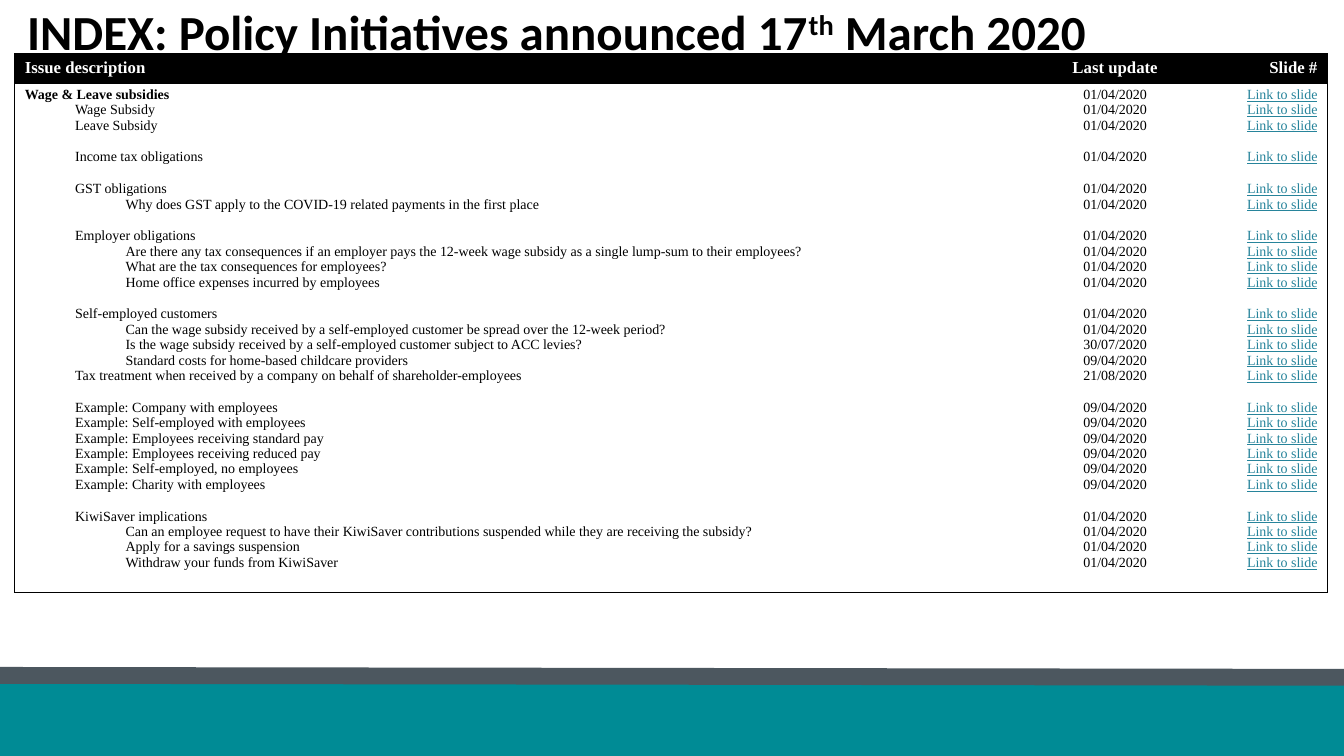
from dataclasses import dataclass

from lxml import etree
from pptx import Presentation
from pptx.dml.color import RGBColor
from pptx.enum.shapes import MSO_CONNECTOR, MSO_SHAPE
from pptx.enum.text import MSO_ANCHOR, MSO_AUTO_SIZE, PP_ALIGN
from pptx.oxml.ns import qn
from pptx.util import Pt

LEFT, CENTER, RIGHT = PP_ALIGN.LEFT, PP_ALIGN.CENTER, PP_ALIGN.RIGHT
MIDDLE, NO_AUTOFIT = MSO_ANCHOR.MIDDLE, MSO_AUTO_SIZE.NONE
RECTANGLE, STRAIGHT = MSO_SHAPE.RECTANGLE, MSO_CONNECTOR.STRAIGHT
TITLE_ONLY = 5


@dataclass(frozen=True)
class Theme:
    title_font: str = "Calibri"
    table_font: str = "Times New Roman"
    title_size: float = 35
    header_size: float = 12
    entry_size: float = 10
    line_pitch: float = 11
    group_gap: float = 11.7
    indent: float = 36
    border_width: float = 0.75
    black: str = "000000"
    white: str = "FFFFFF"
    link: str = "27849B"
    teal: str = "008B95"
    slate: str = "4C575F"


APRIL_1, APRIL_9 = "01/04/2020", "09/04/2020"
JULY_30, AUGUST_21 = "30/07/2020", "21/08/2020"
LINK_TEXT = "Link to slide"
HEADINGS = ["Issue description", "Last update", "Slide #"]
ALIGNMENTS = [LEFT, CENTER, RIGHT]
COLUMN_WIDTHS = [725.2, 121.7, 90.9]
ROW_HEIGHTS = [21.2, 363.8]

# Each group holds (indent level, issue, last update).
ISSUE_GROUPS = [
    [(0, "Wage & Leave subsidies", APRIL_1),
     (1, "Wage Subsidy", APRIL_1),
     (1, "Leave Subsidy", APRIL_1)],
    [(1, "Income tax obligations", APRIL_1)],
    [(1, "GST obligations", APRIL_1),
     (2, "Why does GST apply to the COVID-19 related payments in the first place", APRIL_1)],
    [(1, "Employer obligations", APRIL_1),
     (2, "Are there any tax consequences if an employer pays the 12-week wage subsidy "
         "as a single lump-sum to their employees?", APRIL_1),
     (2, "What are the tax consequences for employees?", APRIL_1),
     (2, "Home office expenses incurred by employees", APRIL_1)],
    [(1, "Self-employed customers", APRIL_1),
     (2, "Can the wage subsidy received by a self-employed customer be spread over "
         "the 12-week period?", APRIL_1),
     (2, "Is the wage subsidy received by a self-employed customer subject to ACC levies?", JULY_30),
     (2, "Standard costs for home-based childcare providers", APRIL_9),
     (1, "Tax treatment when received by a company on behalf of shareholder-employees", AUGUST_21)],
    [(1, "Example: Company with employees", APRIL_9),
     (1, "Example: Self-employed with employees", APRIL_9),
     (1, "Example: Employees receiving standard pay", APRIL_9),
     (1, "Example: Employees receiving reduced pay", APRIL_9),
     (1, "Example: Self-employed, no employees", APRIL_9),
     (1, "Example: Charity with employees", APRIL_9)],
    [(1, "KiwiSaver implications", APRIL_1),
     (2, "Can an employee request to have their KiwiSaver contributions suspended "
         "while they are receiving the subsidy?", APRIL_1),
     (2, "Apply for a savings suspension", APRIL_1),
     (2, "Withdraw your funds from KiwiSaver", APRIL_1)],
]


class IndexSlide:
    def __init__(self, slide, theme):
        self.slide, self.theme = slide, theme

    def style(self, font, name, size, color, bold=False):
        font.name, font.size, font.bold = name, Pt(size), bold
        font.color.rgb = RGBColor.from_string(color)

    def band(self, left, top, width, height, color):
        band = self.slide.shapes.add_shape(RECTANGLE, Pt(left), Pt(top), Pt(width), Pt(height))
        band.shadow.inherit = False
        band.fill.solid()
        band.fill.fore_color.rgb = RGBColor.from_string(color)
        band.line.fill.background()

    def rule(self, x1, y1, x2, y2, color, width):
        rule = self.slide.shapes.add_connector(STRAIGHT, Pt(x1), Pt(y1), Pt(x2), Pt(y2))
        rule.line.color.rgb = RGBColor.from_string(color)
        rule.line.width = Pt(width)
        etree.SubElement(rule._element.spPr, qn("a:effectLst"))

    def title(self, left, top, width, height, parts):
        """Fill the title from (text, is superscript) parts."""
        title = self.slide.shapes.title
        title.left, title.top, title.width, title.height = Pt(left), Pt(top), Pt(width), Pt(height)
        frame = title.text_frame
        frame.auto_size, frame.vertical_anchor = NO_AUTOFIT, MIDDLE
        heading = frame.paragraphs[0]
        heading.alignment = LEFT
        self.style(heading.font, self.theme.title_font, self.theme.title_size,
                   self.theme.black, bold=True)
        for text, superscript in parts:
            run = heading.add_run()
            run.text = text
            if superscript:
                run._r.get_or_add_rPr().set("baseline", "30000")

    def table(self, left, top, widths, heights):
        table = self.slide.shapes.add_table(
            len(heights), len(widths), Pt(left), Pt(top), Pt(sum(widths)), Pt(sum(heights))).table
        table.first_row = table.horz_banding = False
        for column, width in zip(table.columns, widths):
            column.width = Pt(width)
        for row, height in zip(table.rows, heights):
            row.height = Pt(height)
        return table

    def cell_look(self, cell, fill, edges):
        """Fill a cell and draw the borders named in edges, hiding the others."""
        cell.fill.solid()
        cell.fill.fore_color.rgb = RGBColor.from_string(fill)
        properties = cell._tc.get_or_add_tcPr()
        for position, edge in enumerate("LRTB"):
            border = etree.Element(qn(f"a:ln{edge}"), w=str(Pt(self.theme.border_width)))
            if edge in edges:
                paint = etree.SubElement(border, qn("a:solidFill"))
                etree.SubElement(paint, qn("a:srgbClr"), val=self.theme.black)
            else:
                etree.SubElement(border, qn("a:noFill"))
            properties.insert(position, border)

    def header_cell(self, cell, text, alignment):
        heading = cell.text_frame.paragraphs[0]
        heading.text, heading.alignment = text, alignment
        self.style(heading.font, self.theme.table_font, self.theme.header_size,
                   self.theme.white, bold=True)

    def entries_cell(self, cell, groups, alignment, color, underline=False):
        """Write groups of (level, text, is bold) entries with a gap between groups."""
        cell.margin_top = Pt(2.8)
        frame = cell.text_frame
        for group_number, group in enumerate(groups):
            for entry_number, (level, text, bold) in enumerate(group):
                is_first = group_number == entry_number == 0
                entry = frame.paragraphs[0] if is_first else frame.add_paragraph()
                entry.text, entry.alignment = text, alignment
                entry.line_spacing = Pt(self.theme.line_pitch)
                if group_number and not entry_number:
                    entry.space_before = Pt(self.theme.group_gap)
                if level:
                    entry.level = level
                    entry._p.get_or_add_pPr().set("marL", str(Pt(level * self.theme.indent)))
                self.style(entry.font, self.theme.table_font, self.theme.entry_size, color, bold)
                if underline:
                    entry.font.underline = True


def main():
    theme = Theme()
    deck = Presentation()
    deck.slide_width, deck.slide_height = Pt(960), Pt(540)
    page = IndexSlide(deck.slides.add_slide(deck.slide_layouts[TITLE_ONLY]), theme)

    page.band(0, 486.7, 960, 53.3, theme.teal)
    page.rule(0, 482.4, 960, 483.8, theme.slate, 12)
    page.title(12.2, 0, 936.7, 43.9, [("INDEX: Policy Initiatives announced 17", False),
                                      ("th", True), (" March 2020", False)])

    index = page.table(10.5, 38.2, COLUMN_WIDTHS, ROW_HEIGHTS)
    issues = [[(level, issue, level == 0) for level, issue, _ in group] for group in ISSUE_GROUPS]
    updates = [[(0, date, False) for _, _, date in group] for group in ISSUE_GROUPS]
    links = [[(0, LINK_TEXT, False) for _ in group] for group in ISSUE_GROUPS]
    for column, (heading, alignment, side) in enumerate(zip(HEADINGS, ALIGNMENTS, ["L", "", "R"])):
        page.cell_look(index.cell(0, column), theme.black, side + "TB")
        page.cell_look(index.cell(1, column), theme.white, side + "TB")
        page.header_cell(index.cell(0, column), heading, alignment)
    page.entries_cell(index.cell(1, 0), issues, LEFT, theme.black)
    page.entries_cell(index.cell(1, 1), updates, CENTER, theme.black)
    page.entries_cell(index.cell(1, 2), links, RIGHT, theme.link, underline=True)

    deck.save("out.pptx")


if __name__ == "__main__":
    main()
